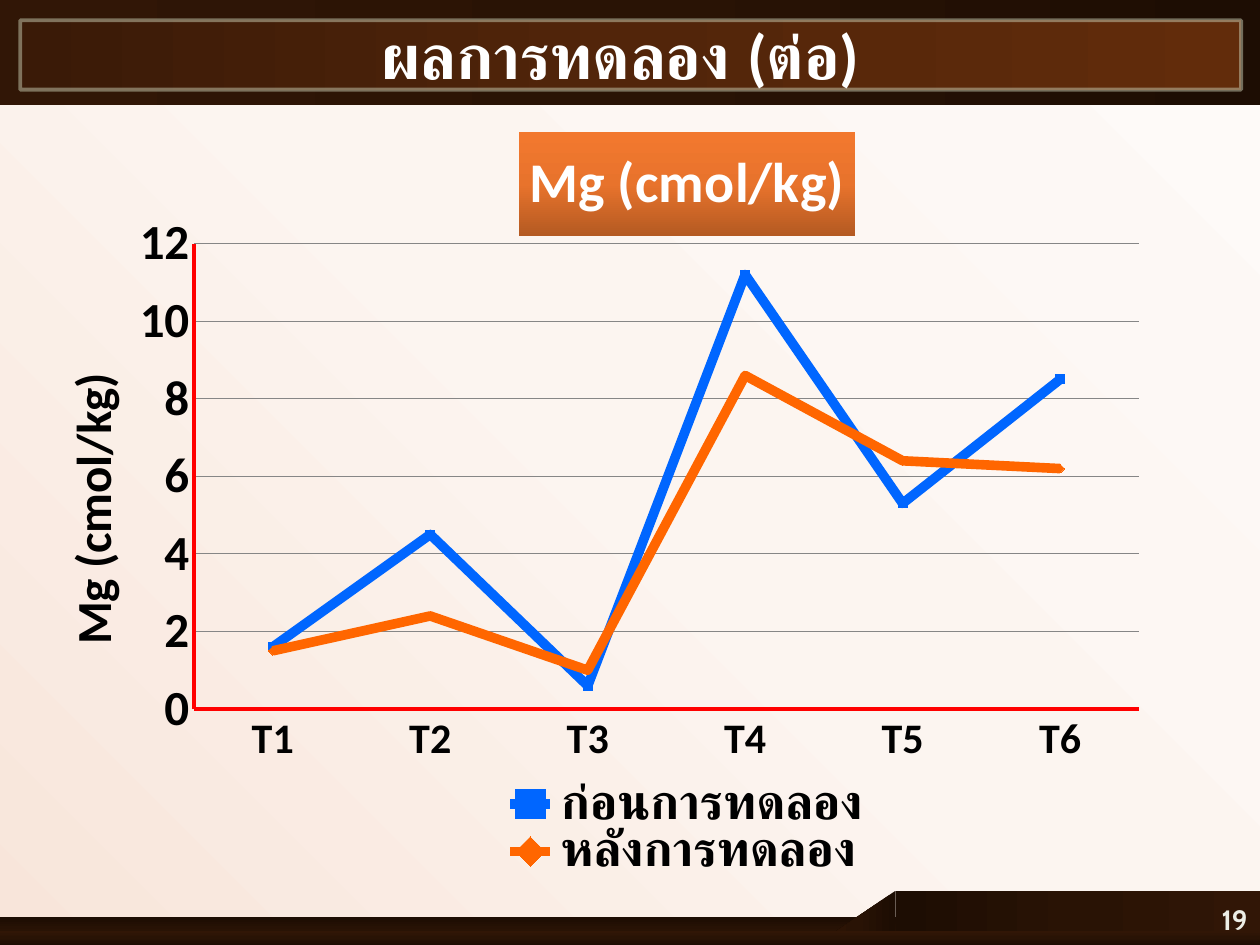
from copy import deepcopy

from lxml import etree
from pptx import Presentation
from pptx.chart.data import CategoryChartData
from pptx.dml.color import RGBColor
from pptx.enum.chart import XL_CHART_TYPE, XL_LEGEND_POSITION, XL_MARKER_STYLE, XL_TICK_MARK
from pptx.enum.shapes import MSO_SHAPE
from pptx.enum.text import MSO_ANCHOR, PP_ALIGN
from pptx.oxml.ns import qn
from pptx.util import Cm, Pt

RECTANGLE, TRIANGLE = MSO_SHAPE.RECTANGLE, MSO_SHAPE.RIGHT_TRIANGLE
CENTER, RIGHT = PP_ALIGN.CENTER, PP_ALIGN.RIGHT
SQUARE, DIAMOND = XL_MARKER_STYLE.SQUARE, XL_MARKER_STYLE.DIAMOND
NO_TICK = XL_TICK_MARK.NONE

BLACK = RGBColor(0x00, 0x00, 0x00)
WHITE = RGBColor(0xFF, 0xFF, 0xFF)
CREAM = RGBColor(0xED, 0xEE, 0xE6)
BORDER = RGBColor(0xC9, 0xCD, 0xB3)
GRID = RGBColor(0x86, 0x86, 0x86)
RED = RGBColor(0xFF, 0x00, 0x00)
BLUE = RGBColor(0x00, 0x66, 0xFF)
ORANGE = RGBColor(0xFF, 0x66, 0x00)
PAPER = [RGBColor(0xFE, 0xFA, 0xF8), RGBColor(0xFC, 0xF5, 0xF0), RGBColor(0xF8, 0xE5, 0xDA)]
DARK = [RGBColor(0x1D, 0x0D, 0x03), RGBColor(0x29, 0x13, 0x05), RGBColor(0x31, 0x16, 0x06)]
BROWN = [RGBColor(0x3A, 0x1A, 0x07), RGBColor(0x52, 0x25, 0x0A), RGBColor(0x62, 0x2C, 0x0B)]
COPPER = [RGBColor(0xF2, 0x78, 0x2E), RGBColor(0xE8, 0x73, 0x2C), RGBColor(0xB4, 0x5A, 0x22)]

UNIT = "Mg (cmol/kg)"
CATEGORIES = ["T1", "T2", "T3", "T4", "T5", "T6"]
SERIES = [
    ("ก่อนการทดลอง", [1.6, 4.5, 0.6, 11.2, 5.3, 8.5], BLUE, SQUARE),
    ("หลังการทดลอง", [1.5, 2.4, 1, 8.6, 6.4, 6.2], ORANGE, DIAMOND),
]
# kind, box in cm, rotation, colours, clockwise gradient angle
BANDS = [
    (RECTANGLE, (0, 18.49, 18.06, 0.56), 0, DARK, 90),
    (TRIANGLE, (16.71, 17.7, 1.09, 1.6), 270, DARK, 270),
    (RECTANGLE, (18.06, 17.96, 7.34, 0.97), 0, DARK, 0),
    (RECTANGLE, (0, 18.77, 25.4, 0.28), 0, DARK, 270),
    (RECTANGLE, (0, 0, 25.4, 2.11), 0, DARK, 180),
    (RECTANGLE, (0.41, 0.41, 24.61, 1.4), 0, BROWN, 0),
]


def set_gradient(fill, owner, colors, angle):
    """Give fill three even stops; owner is the XML element that holds it."""
    fill.gradient()
    fill.gradient_angle = -angle % 360
    stop_list = next(owner.iter(qn("a:gsLst")))
    stop_list.insert(1, deepcopy(stop_list[0]))
    for stop, color, position in zip(fill.gradient_stops, colors, (0, 0.5, 1)):
        stop.color.rgb = color
        stop.position = position


def set_font(font, size, color=BLACK, name="Calibri", bold=True):
    for key, value in {"size": Pt(size), "name": name, "bold": bold}.items():
        setattr(font, key, value)
    font.color.rgb = color


def set_line(line, color, width):
    line.color.rgb = color
    line.width = Pt(width)


def add_band(page, kind, box, rotation, colors, angle):
    band = page.shapes.add_shape(kind, *map(Cm, box))
    band.rotation = rotation
    band.shadow.inherit = False
    band.line.fill.background()
    set_gradient(band.fill, band._element, colors, angle)
    return band


def add_border(band):
    set_line(band.line, BORDER, 2.25)
    color = next(band.line._ln.iter(qn("a:srgbClr")))
    etree.SubElement(color, qn("a:alpha"), val="50000")


def write_text(frame, text, alignment, anchor, **font):
    frame.word_wrap = True
    frame.vertical_anchor = anchor
    para = frame.paragraphs[0]
    para.alignment = alignment
    span = para.add_run()
    span.text = text
    set_font(span.font, **font)


def place_part(part, index, inner=False, **fractions):
    """Put a manual layout into a chart part as its child number index."""
    for old in part.findall(qn("c:layout")):
        part.remove(old)
    layout = etree.Element(qn("c:layout"))
    manual = etree.SubElement(layout, qn("c:manualLayout"))
    if inner:
        etree.SubElement(manual, qn("c:layoutTarget"), val="inner")
    for key in ("x", "y"):
        etree.SubElement(manual, qn(f"c:{key}Mode"), val="edge")
    for key, value in fractions.items():
        etree.SubElement(manual, qn(f"c:{key}"), val=str(value))
    part.insert(index, layout)


def write_chart_title(title, size, color, x, y):
    span = title.text_frame.paragraphs[0].add_run()
    span.text = UNIT
    set_font(span.font, size, color)
    place_part(title._element, 1, x=x, y=y)


def format_axis(axis, size):
    axis.major_tick_mark = axis.minor_tick_mark = NO_TICK
    set_font(axis.tick_labels.font, size)
    set_line(axis.format.line, RED, 2.25)


def format_series(series, color, style):
    series.smooth = False
    set_line(series.format.line, color, 5.5)
    marker = series.marker
    marker.style, marker.size = style, 5
    marker.format.fill.solid()
    marker.format.fill.fore_color.rgb = color
    set_line(marker.format.line, color, 0.75)


def add_line_chart(page, box):
    chart_data = CategoryChartData()
    chart_data.categories = CATEGORIES
    for name, values, _, _ in SERIES:
        chart_data.add_series(name, values)
    chart = page.shapes.add_chart(XL_CHART_TYPE.LINE_MARKERS, *map(Cm, box), chart_data).chart
    set_font(chart.font, 18, bold=False)

    chart.has_title = True
    write_chart_title(chart.chart_title, 32, WHITE, 0.412, 0.034)
    set_gradient(chart.chart_title.format.fill, chart.chart_title._element, COPPER, 90)

    format_axis(chart.category_axis, 24)
    value_axis = chart.value_axis
    format_axis(value_axis, 28)
    value_axis.minimum_scale, value_axis.maximum_scale, value_axis.major_unit = 0, 12, 2
    value_axis.has_major_gridlines = True
    set_line(value_axis.major_gridlines.format.line, GRID, 0.75)
    write_chart_title(value_axis.axis_title, 28, BLACK, 0.04, 0.33)

    plot = chart.plots[0]
    plot.vary_by_categories = False
    for series, (_, _, color, style) in zip(plot.series, SERIES):
        format_series(series, color, style)

    chart.has_legend = True
    legend = chart.legend
    legend.position = XL_LEGEND_POSITION.RIGHT
    legend.include_in_layout = False
    set_font(legend.font, 28)
    place_part(legend._element, 1, x=0.4, y=0.86, w=0.29, h=0.12)
    plot_area = next(chart._chartSpace.iter(qn("c:plotArea")))
    place_part(plot_area, 0, inner=True, x=0.154, y=0.176, w=0.75, h=0.594)


def place_title(page, text, box):
    title = page.shapes.title
    title.left, title.top, title.width, title.height = map(Cm, box)
    write_text(title.text_frame, text, CENTER, MSO_ANCHOR.TOP, size=36, color=WHITE)
    page.shapes._spTree.append(title._element)  # in front of the bands


def add_page_number(page, text, box):
    number = page.shapes.add_textbox(*map(Cm, box))
    write_text(number.text_frame, text, RIGHT, MSO_ANCHOR.MIDDLE,
               size=16, color=CREAM, name="Cabin")


def main():
    deck = Presentation()
    deck.slide_width, deck.slide_height = Cm(25.4), Cm(19.05)
    page = deck.slides.add_slide(deck.slide_layouts[5])
    set_gradient(page.background.fill, page._element, PAPER, 135)
    bands = [add_band(page, *band) for band in BANDS]
    add_border(bands[-1])
    place_title(page, "ผลการทดลอง (ต่อ)", (0.3, 0.2, 24.41, 3.33))
    add_page_number(page, "19", (23.42, 18.03, 1.98, 1.02))
    add_line_chart(page, (0, 2.13, 25.4, 15.8))
    deck.save("out.pptx")


if __name__ == "__main__":
    main()
